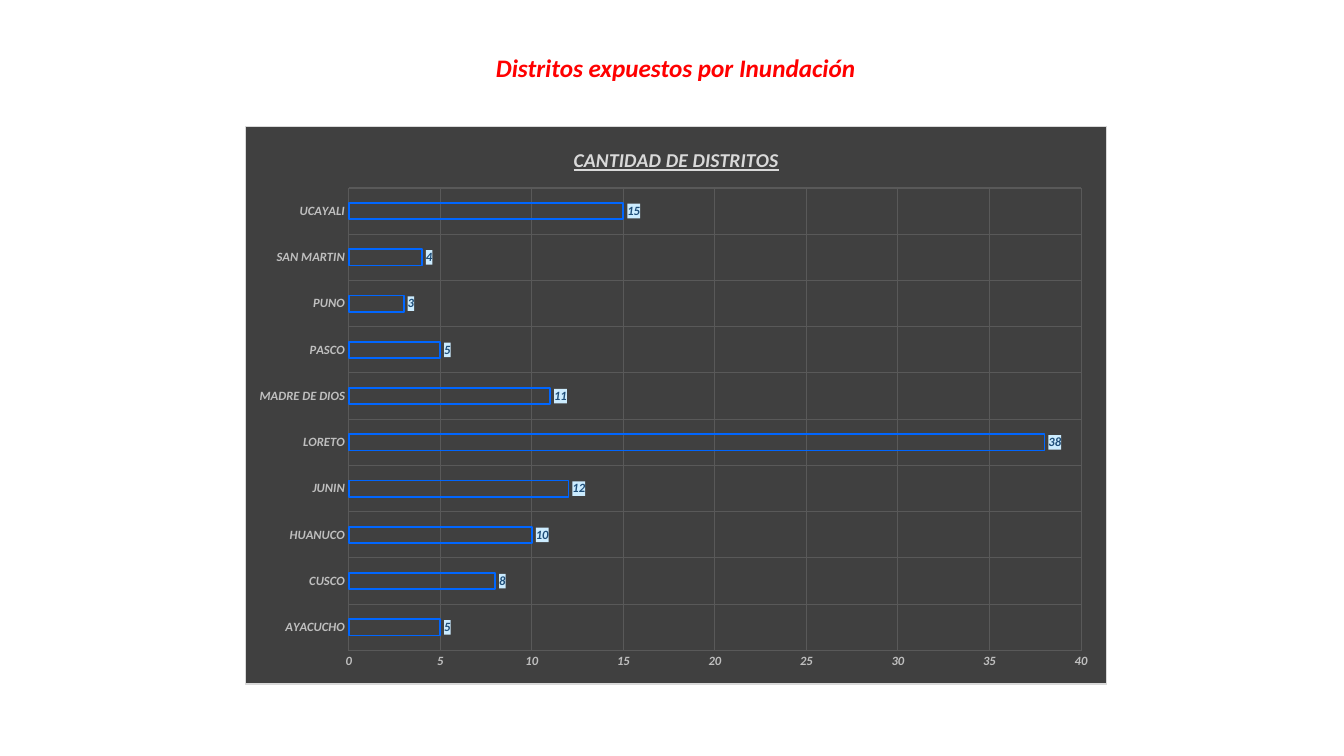
"""Builds a slide with a bar chart of the districts exposed to flooding."""
import pptx
import pptx.chart.data
import pptx.dml.color
import pptx.enum.chart
import pptx.enum.text
import pptx.oxml
import pptx.oxml.ns
import pptx.util

Cm = pptx.util.Cm
Pt = pptx.util.Pt
RGBColor = pptx.dml.color.RGBColor
qn = pptx.oxml.ns.qn

RED = RGBColor(0xFF, 0x00, 0x00)
BLUE = RGBColor(0x00, 0x66, 0xFF)
NAVY = RGBColor(0x1F, 0x4E, 0x79)
PALE_BLUE = RGBColor(0xCC, 0xEC, 0xFF)
CHARCOAL = RGBColor(0x40, 0x40, 0x40)
GRID_GRAY = RGBColor(0x59, 0x59, 0x59)
AXIS_GRAY = RGBColor(0xBF, 0xBF, 0xBF)
LIGHT_GRAY = RGBColor(0xD9, 0xD9, 0xD9)

DISTRICTS = {
    "AYACUCHO": 5,
    "CUSCO": 8,
    "HUANUCO": 10,
    "JUNIN": 12,
    "LORETO": 38,
    "MADRE DE DIOS": 11,
    "PASCO": 5,
    "PUNO": 3,
    "SAN MARTIN": 4,
    "UCAYALI": 15,
}


def format_font(font, size, color, underline=None):
    font.name = "Calibri"
    font.size = Pt(size)
    font.bold = font.italic = True
    font.underline = underline
    font.color.rgb = color


def write_text(tf, text, **fmt):
    p = tf.paragraphs[0]
    p.alignment = pptx.enum.text.PP_ALIGN.CENTER
    r = p.add_run()
    r.text = text
    format_font(r.font, **fmt)


def box_xml(fill, border=None):
    line = "<a:ln><a:noFill/></a:ln>"
    if border is not None:
        line = (f'<a:ln w="{Pt(0.75)}"><a:solidFill><a:srgbClr val="{border}"/>'
                "</a:solidFill></a:ln>")
    return pptx.oxml.parse_xml(
        f'<c:spPr {pptx.oxml.ns.nsdecls("c", "a")}><a:solidFill>'
        f'<a:srgbClr val="{fill}"/></a:solidFill>{line}</c:spPr>')


def layout_xml(x, y, w, h):
    return pptx.oxml.parse_xml(
        f'<c:layout {pptx.oxml.ns.nsdecls("c")}><c:manualLayout>'
        '<c:layoutTarget val="inner"/><c:xMode val="edge"/><c:yMode val="edge"/>'
        f'<c:x val="{x}"/><c:y val="{y}"/><c:w val="{w}"/><c:h val="{h}"/>'
        "</c:manualLayout></c:layout>")


class SlideBuilder:
    def __init__(self, prs):
        self.slide = prs.slides.add_slide(prs.slide_layouts[5])

    def title(self, text, left, top, width, height):
        sp = self.slide.shapes.title
        sp.left, sp.top, sp.width, sp.height = left, top, width, height
        tf = sp.text_frame
        tf.word_wrap = False
        tf.auto_size = pptx.enum.text.MSO_AUTO_SIZE.NONE
        tf.vertical_anchor = pptx.enum.text.MSO_ANCHOR.MIDDLE
        write_text(tf, text, size=18, color=RED)

    def bar_chart(self, title, values, left, top, width, height):
        data = pptx.chart.data.CategoryChartData(number_format="#,##0")
        data.categories = values.keys()
        data.add_series(title, values.values())
        chart = self.slide.shapes.add_chart(
            pptx.enum.chart.XL_CHART_TYPE.BAR_CLUSTERED,
            left, top, width, height, data).chart
        chart.font.name = "Calibri"
        chart.font.size = Pt(10)
        chart.has_legend = False
        chart.has_title = True
        write_text(chart.chart_title.text_frame, title,
                   size=14, color=LIGHT_GRAY, underline=True)
        space = chart._chartSpace
        space.find(qn("c:chart")).addnext(box_xml(CHARCOAL, LIGHT_GRAY))
        area = space.find(".//" + qn("c:plotArea"))
        for old in area.findall(qn("c:layout")):
            area.remove(old)
        area.insert(0, layout_xml(0.12, 0.11, 0.85, 0.83))
        for axis in (chart.category_axis, chart.value_axis):
            self.axis(axis)
        chart.value_axis.minimum_scale = 0
        chart.value_axis.maximum_scale = 40
        chart.value_axis.major_unit = 5
        self.bars(chart.plots[0])

    def axis(self, axis):
        axis.major_tick_mark = pptx.enum.chart.XL_TICK_MARK.NONE
        axis.minor_tick_mark = pptx.enum.chart.XL_TICK_MARK.NONE
        axis.format.line.fill.background()
        axis.has_major_gridlines = True
        grid = axis.major_gridlines.format.line
        grid.width = Pt(0.75)
        grid.color.rgb = GRID_GRAY
        format_font(axis.tick_labels.font, size=9, color=AXIS_GRAY)

    def bars(self, plot):
        plot.gap_width = 182
        plot.overlap = -50
        plot.vary_by_categories = False
        bars = plot.series[0].format
        bars.fill.background()
        bars.line.color.rgb = BLUE
        bars.line.width = Pt(1.25)
        plot.has_data_labels = True
        labels = plot.data_labels
        labels.show_value = True
        labels.number_format = "#,##0"
        labels.number_format_is_linked = False
        labels.position = pptx.enum.chart.XL_LABEL_POSITION.OUTSIDE_END
        format_font(labels.font, size=9, color=NAVY)
        labels._element.find(qn("c:txPr")).addprevious(box_xml(PALE_BLUE))


def main():
    prs = pptx.Presentation()
    prs.slide_width, prs.slide_height = Cm(33.87), Cm(19.05)
    builder = SlideBuilder(prs)
    builder.title("Distritos expuestos por Inundación",
                  Cm(12.19), Cm(1.19), Cm(9.68), Cm(1.02))
    builder.bar_chart("CANTIDAD DE DISTRITOS", DISTRICTS,
                      Cm(6.17), Cm(3.18), Cm(21.74), Cm(14.07))
    prs.save("out.pptx")


if __name__ == "__main__":
    main()
